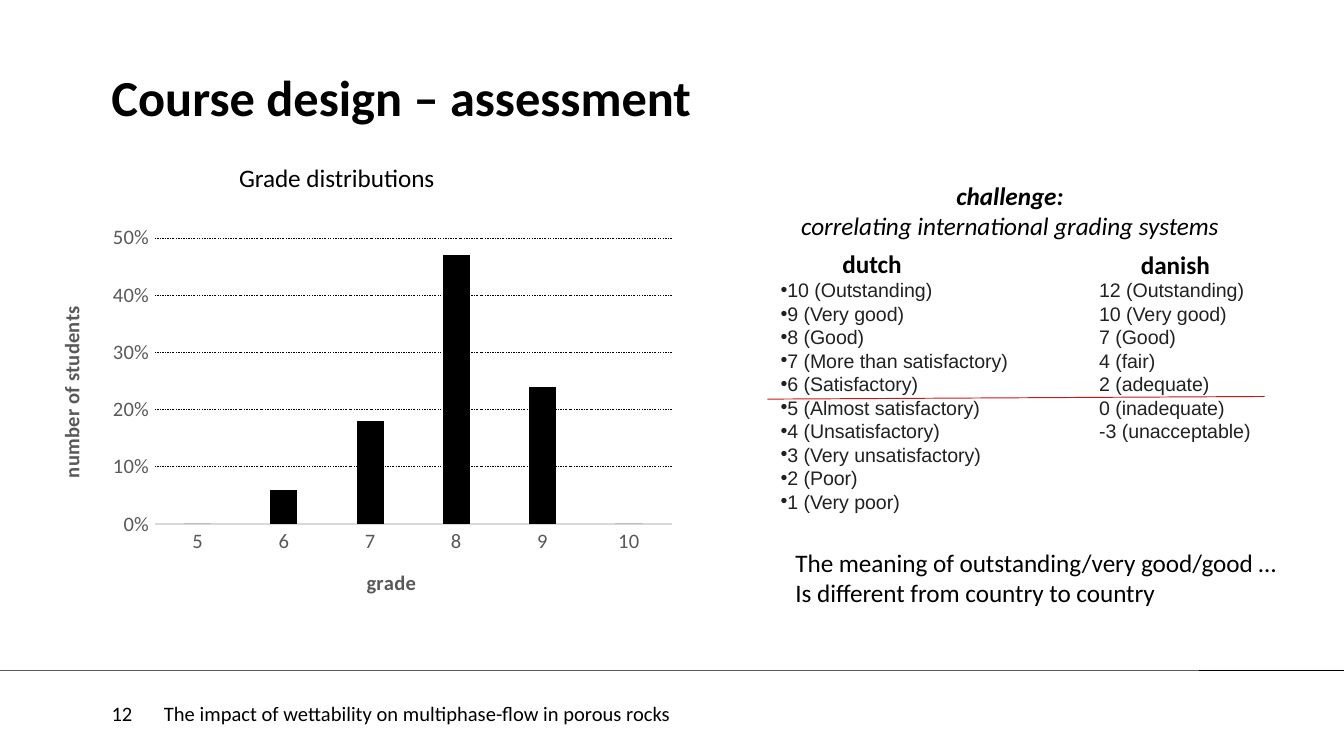
"""Build the course assessment slide with its grade chart and grading scales."""
from lxml import etree
from pptx import Presentation
from pptx import util as u
from pptx.chart.data import CategoryChartData
from pptx.dml.color import RGBColor
from pptx.enum import chart as charts, dml, shapes, text
from pptx.oxml import parse_xml
from pptx.oxml.ns import nsdecls, qn

BLACK, GRAY, INK = "000000", "595959", "202122"


def paint(fill, color):
    fill.solid()
    fill.fore_color.rgb = RGBColor.from_string(color)


def write(frame, content, size=13.5, font="Calibri", color=BLACK, bold=False, italic=False,
          align=None, bullet=None, spacing=None, wrap=False, margins=None, anchor=None):
    frame.word_wrap = wrap
    if margins:
        (frame.margin_left, frame.margin_top,
         frame.margin_right, frame.margin_bottom) = map(u.Inches, margins)
    if anchor is not None:
        frame.vertical_anchor = anchor
    for index, line in enumerate(content.split("\n")):
        para = frame.add_paragraph() if index else frame.paragraphs[0]
        if bullet:
            properties = para._p.get_or_add_pPr()
            etree.SubElement(properties, qn("a:buFont")).set("typeface", font)
            etree.SubElement(properties, qn("a:buChar")).set("char", bullet)
        if align is not None:
            para.alignment = align
        if spacing:
            para.line_spacing = u.Pt(spacing)
        span = para.add_run()
        span.text = line
        span.font.size, span.font.name = u.Pt(size), font
        span.font.bold, span.font.italic = bold, italic
        paint(span.font.fill, color)


deck = Presentation()
deck.slide_width, deck.slide_height = u.Inches(10), u.Inches(10 * 9 / 16)
page = deck.slides.add_slide(deck.slide_layouts[6])

# Rules
for start_x, start_y, end_x, end_y, color, weight in [
    (0, 4.99, 10, 4.99, BLACK, 0.25),
    (5.71, 2.97, 9.41, 2.95, "C81919", 0.5),
]:
    rule = page.shapes.add_connector(
        shapes.MSO_CONNECTOR.STRAIGHT, *map(u.Inches, (start_x, start_y, end_x, end_y)))
    paint(rule.line.fill, color)
    rule.line.width = u.Pt(weight)
    etree.SubElement(rule._element.spPr, qn("a:effectLst"))

# Footer
for left, width, inset, label in [
    (1.22, 7.7, 0, "The impact of wettability on multiphase-flow in porous rocks"),
    (0, 1.22, 0.83, "12"),
]:
    panel = page.shapes.add_shape(
        shapes.MSO_SHAPE.RECTANGLE, *map(u.Inches, (left, 4.99, width, 0.63)))
    panel.shadow.inherit = False
    paint(panel.fill, "FFFFFF")
    panel.line.fill.background()
    write(panel.text_frame, label, size=11, wrap=True, margins=(inset, 0, 0, 0),
          align=text.PP_ALIGN.LEFT, anchor=text.MSO_ANCHOR.MIDDLE)

# Text boxes
dutch_scale = """10 (Outstanding)
9 (Very good)
8 (Good)
7 (More than satisfactory)
6 (Satisfactory)
5 (Almost satisfactory)
4 (Unsatisfactory)
3 (Very unsatisfactory)
2 (Poor)
1 (Very poor)"""
danish_scale = """12 (Outstanding)
10 (Very good)
7 (Good)
4 (fair)
2 (adequate)
0 (inadequate)
-3 (unacceptable)"""
closing = "The meaning of outstanding/very good/good …\nIs different from country to country"
challenge = "challenge:\ncorrelating international grading systems"
scale = dict(size=10.5, font="Arial", color=INK, wrap=True)
for place, content, style in [
    ((0.83, 0.57, 8.26, 0.8), "Course design – assessment",
     dict(size=27, bold=True, spacing=27, wrap=True, margins=(0, 0, 0, 0))),
    ((1.68, 1.16, 1.68, 0.33), "Grade distributions", {}),
    ((5.83, 1.29, 3.37, 0.56), challenge, dict(italic=True, align=text.PP_ALIGN.CENTER)),
    ((5.71, 2.02, 2.03, 1.87), dutch_scale, dict(scale, bullet="•")),
    ((8.08, 2.02, 2.03, 1.34), danish_scale, scale),
    ((6.17, 1.8, 0.64, 0.33), "dutch", dict(bold=True)),
    ((8.39, 1.81, 0.72, 0.33), "danish", dict(bold=True)),
    ((5.82, 4.02, 3.84, 0.56), closing, {}),
]:
    box = page.shapes.add_textbox(*map(u.Inches, place))
    write(box.text_frame, content, **style)
    if content == challenge:
        box.text_frame.paragraphs[0].runs[0].font.bold = True

# Grade chart
data = CategoryChartData(number_format="0%")
data.categories = ["5", "6", "7", "8", "9", "10"]
data.add_series("Series 1", [0, 0.06, 0.18, 0.47, 0.24, 0])
chart = page.shapes.add_chart(
    charts.XL_CHART_TYPE.COLUMN_CLUSTERED, *map(u.Inches, (0.1, 1.62, 5, 3)), data).chart
chart.has_legend = chart.has_title = False
chart.font.size, chart.font.name = u.Pt(11), "Calibri"
plot = chart.plots[0]
plot.gap_width, plot.overlap, plot.vary_by_categories = 219, -27, False
paint(plot.series[0].format.fill, BLACK)

grades, shares = chart.category_axis, chart.value_axis
for axis, label in [(grades, "grade"), (shares, "number of students")]:
    axis.major_tick_mark = axis.minor_tick_mark = charts.XL_TICK_MARK.NONE
    axis.tick_labels.font.size, axis.tick_labels.font.name = u.Pt(11), "Calibri"
    paint(axis.tick_labels.font.fill, GRAY)
    write(axis.axis_title.text_frame, label, size=11, color=GRAY, bold=True, wrap=True)
paint(grades.format.line.fill, "D9D9D9")
grades.format.line.width = u.Pt(0.75)
shares.format.line.fill.background()
shares.major_unit = 0.1
shares.tick_labels.number_format, shares.tick_labels.number_format_is_linked = "0%", False
grid = shares.major_gridlines.format.line
paint(grid.fill, BLACK)
grid.width, grid.dash_style = u.Pt(0.25), dml.MSO_LINE.DASH_DOT
turned = shares.axis_title.text_frame._txBody.bodyPr
turned.set("rot", "-5400000")
turned.set("vert", "horz")

# Manual layout, in fractions of the chart
plot_area = chart._chartSpace.chart.plotArea
for element, parts in [
    (plot_area, dict(x=0.21, y=0.05, w=0.77, h=0.71)),
    (grades.axis_title._element, dict(x=0.52, y=0.86)),
    (shares.axis_title._element, dict(x=0.06, y=0.21)),
]:
    for old in element.findall(qn("c:layout")):
        element.remove(old)
    target = '<c:layoutTarget val="inner"/>' if element is plot_area else ""
    modes = "".join(f'<c:{key}Mode val="edge"/>' for key in parts if key in "xy")
    sizes = "".join(f'<c:{key} val="{value}"/>' for key, value in parts.items())
    layout = parse_xml(f'<c:layout {nsdecls("c")}><c:manualLayout>{target}{modes}{sizes}'
                       '</c:manualLayout></c:layout>')
    element.insert(0 if element is plot_area else 1, layout)

deck.save("out.pptx")
